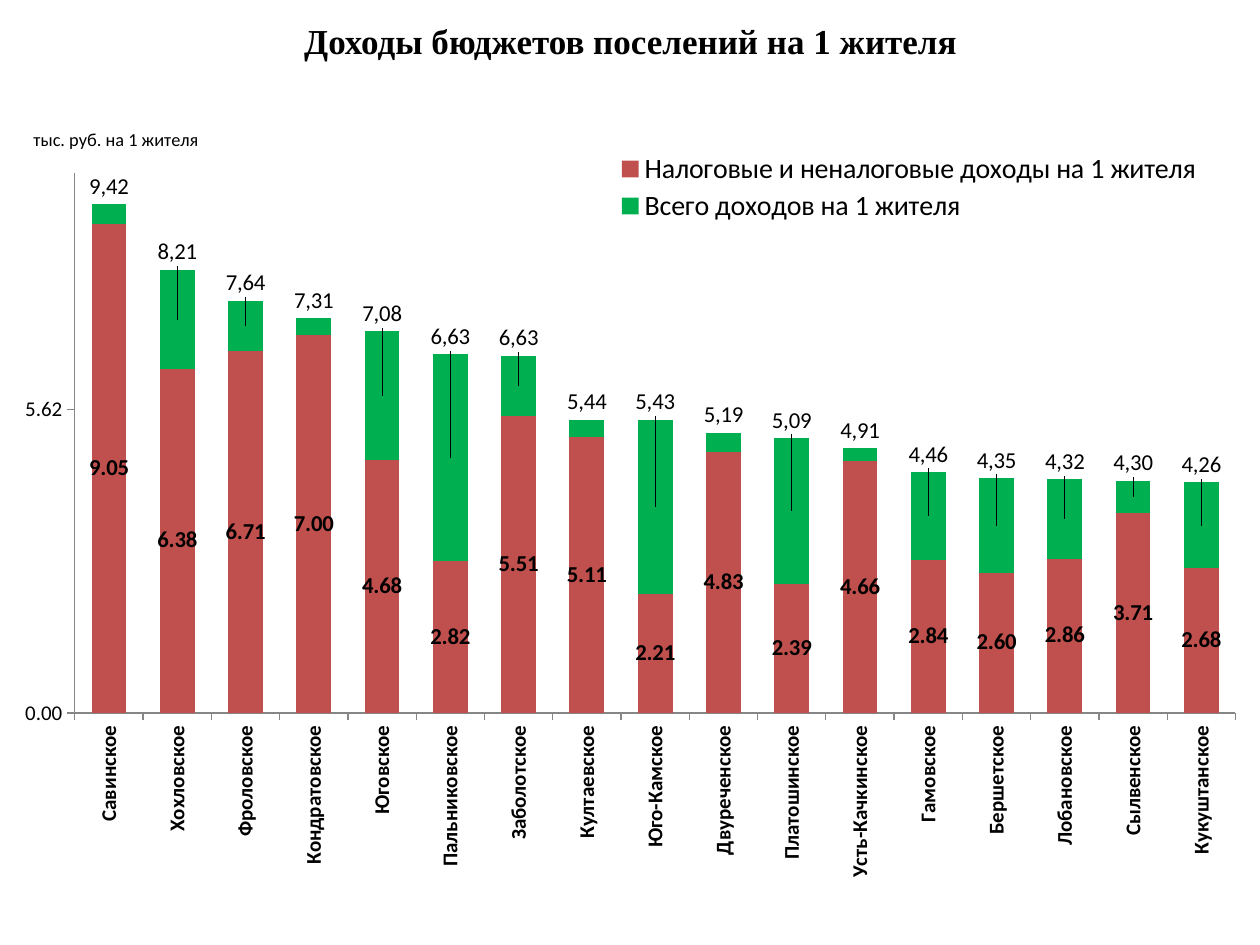
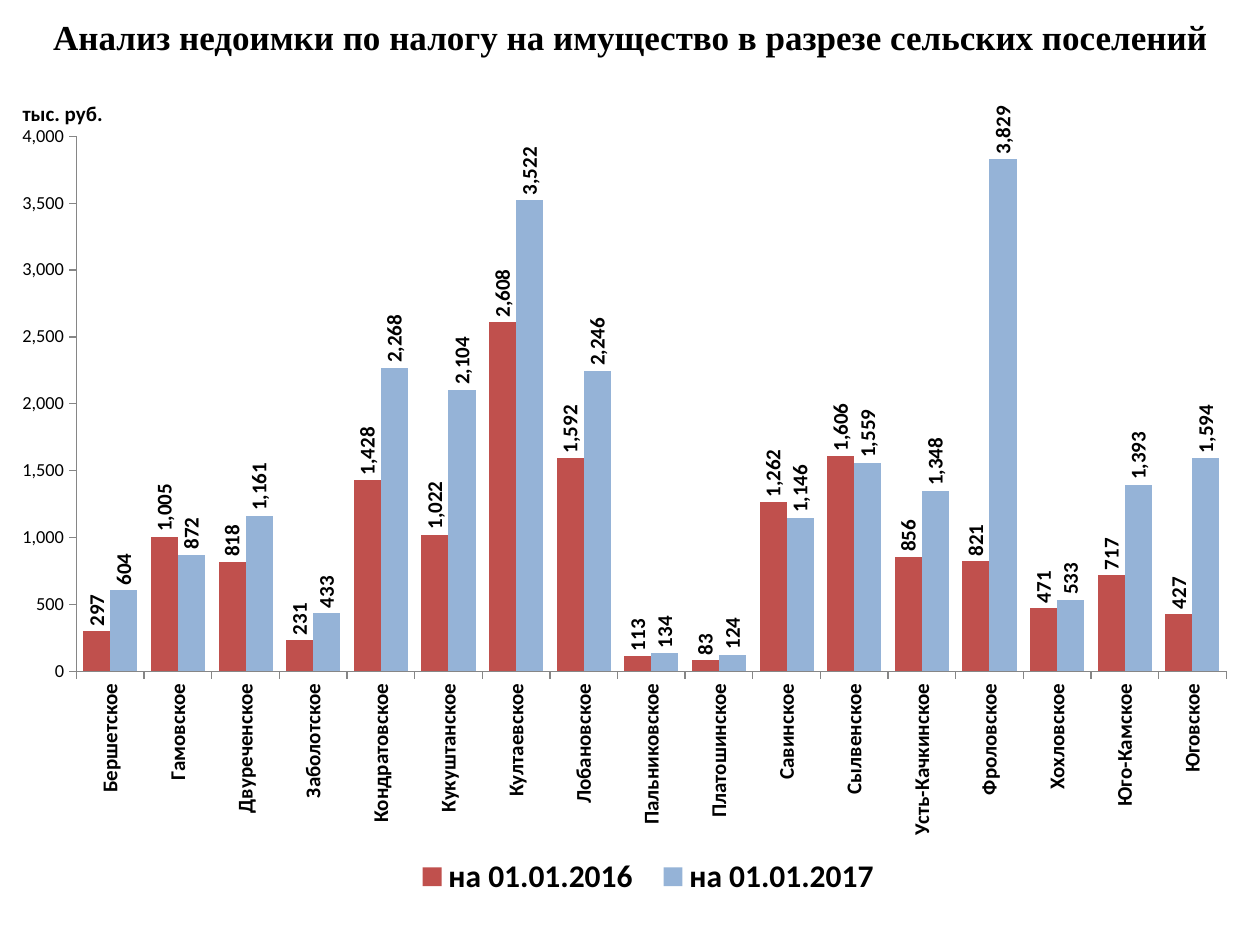
from dataclasses import dataclass
from typing import Any, Optional

import lxml.etree
import pptx
import pptx.chart.data
import pptx.dml.color
import pptx.enum.chart
import pptx.enum.text
import pptx.oxml.ns
import pptx.util

Pt = pptx.util.Pt
qn = pptx.oxml.ns.qn
ChartType = pptx.enum.chart.XL_CHART_TYPE
LegendPosition = pptx.enum.chart.XL_LEGEND_POSITION
LabelPosition = pptx.enum.chart.XL_LABEL_POSITION

COLOURS = {
    "text": "000000",
    "axis": "868686",
    "red": "C0504D",
    "green": "00B050",
    "blue": "95B3D7",
}
CHART_FONT = "Calibri"
TITLE_FONT = "Times New Roman"
UPWARDS = -90


@dataclass
class Series:
    name: str
    colour: str
    values: list[float]


@dataclass
class ChartSlide:
    title: str
    title_box: tuple[float, float, float, float]
    chart_box: tuple[float, float, float, float]
    chart_type: Any
    settlements: list[str]
    series: list[Series]
    plot_area: tuple[float, float, float, float]
    plot_format: dict[str, int]
    axis_format: dict[str, Any]
    axis_size: float
    number_format: str
    label_size: float
    label_angle: int
    label_position: Any
    unit: str
    unit_place: tuple[float, float]
    unit_font: dict[str, Any]
    legend_position: Any
    legend_place: tuple[float, float, float, float]
    legend_font: dict[str, Any]
    totals: Optional[list[str]] = None


INCOME = ChartSlide(
    title="Доходы бюджетов поселений на 1 жителя",
    title_box=(14.4, 9.4, 692, 28),
    chart_box=(14.4, 31.7, 692, 487.4),
    chart_type=ChartType.COLUMN_STACKED,
    settlements=[
        "Савинское", "Хохловское", "Фроловское", "Кондратовское", "Юговское",
        "Пальниковское", "Заболотское", "Култаевское", "Юго-Камское",
        "Двуреченское", "Платошинское", "Усть-Качкинское", "Гамовское",
        "Бершетское", "Лобановское", "Сылвенское", "Кукуштанское",
    ],
    series=[
        Series("Налоговые и неналоговые доходы на 1 жителя", "red",
               [9.05, 6.38, 6.71, 7, 4.68, 2.82, 5.51, 5.11, 2.21, 4.83,
                2.39, 4.66, 2.84, 2.6, 2.86, 3.71, 2.68]),
        Series("Всего доходов на 1 жителя", "green",
               [0.37, 1.83, 0.93, 0.31, 2.39, 3.82, 1.11, 0.32, 3.22, 0.36,
                2.7, 0.25, 1.62, 1.75, 1.47, 0.59, 1.59]),
    ],
    plot_area=(0.04, 0.138, 0.96, 0.633),
    plot_format={"gap_width": 96, "overlap": 100},
    axis_format={"minimum_scale": 0, "maximum_scale": 10, "major_unit": 5.62},
    axis_size=12,
    number_format="0.00",
    label_size=13,
    label_angle=0,
    label_position=LabelPosition.CENTER,
    unit="тыс. руб. на 1 жителя",
    unit_place=(0.003, 0.08),
    unit_font={"size": Pt(10.5), "bold": False},
    legend_position=LegendPosition.TOP,
    legend_place=(0.48, 0.11, 0.5, 0.09),
    legend_font={"size": Pt(16), "bold": False},
    totals=["9,42", "8,21", "7,64", "7,31", "7,08", "6,63", "6,63", "5,44",
            "5,43", "5,19", "5,09", "4,91", "4,46", "4,35", "4,32", "4,30",
            "4,26"],
)

ARREARS = ChartSlide(
    title="Анализ недоимки по налогу на имущество в разрезе сельских поселений",
    title_box=(14.4, 3.6, 692, 34),
    chart_box=(8.6, 37.4, 702.7, 494.6),
    chart_type=ChartType.COLUMN_CLUSTERED,
    settlements=sorted(INCOME.settlements),
    series=[
        Series("на 01.01.2016", "red",
               [297, 1005, 818, 231, 1428, 1022, 2608, 1592, 113, 83, 1262,
                1606, 856, 821, 471, 717, 427]),
        Series("на 01.01.2017", "blue",
               [604, 872, 1161, 433, 2268, 2104, 3522, 2246, 134, 124, 1146,
                1559, 1348, 3829, 533, 1393, 1594]),
    ],
    plot_area=(0.05, 0.082, 0.935, 0.618),
    plot_format={"gap_width": 50, "overlap": 0},
    axis_format={"minimum_scale": 0, "maximum_scale": 4000, "major_unit": 500},
    axis_size=10.5,
    number_format="#,##0",
    label_size=12,
    label_angle=UPWARDS,
    label_position=LabelPosition.OUTSIDE_END,
    unit="тыс. руб.",
    unit_place=(0.003, 0.035),
    unit_font={"size": Pt(12), "bold": True},
    legend_position=LegendPosition.BOTTOM,
    legend_place=(0.315, 0.91, 0.4, 0.055),
    legend_font={"size": Pt(18), "bold": True},
)


def rgb(name: str) -> pptx.dml.color.RGBColor:
    return pptx.dml.color.RGBColor.from_string(COLOURS[name])


def apply_format(target: Any, values: dict[str, Any]) -> None:
    for attribute, value in values.items():
        setattr(target, attribute, value)


def set_font(font: Any, **values: Any) -> None:
    apply_format(font, {"name": CHART_FONT, **values})
    font.color.rgb = rgb("text")


def rotate_text(element: Any, degrees: int) -> None:
    for body in element.iter(qn("a:bodyPr")):
        body.set("rot", str(degrees * 60000))
        body.set("vert", "horz")


def set_layout(element: Any, index: int, values: dict[str, float],
               mode: Optional[str] = "edge", inner: bool = False) -> None:
    """Place a chart part by fractions of the chart; mode None means an offset."""
    for old in element.findall(qn("c:layout")):
        element.remove(old)
    layout = lxml.etree.Element(qn("c:layout"))
    manual = lxml.etree.SubElement(layout, qn("c:manualLayout"))
    settings: dict[str, Any] = {"layoutTarget": "inner"} if inner else {}
    if mode:
        settings |= {"xMode": mode, "yMode": mode}
    for tag, value in (settings | values).items():
        lxml.etree.SubElement(manual, qn(f"c:{tag}")).set("val", str(value))
    element.insert(index, layout)


def add_title(slide: Any, content: ChartSlide) -> None:
    title = slide.shapes.title
    apply_format(title, dict(zip(("left", "top", "width", "height"),
                                 map(Pt, content.title_box))))
    frame = title.text_frame
    frame.text = content.title
    apply_format(frame, {
        "margin_top": 0, "margin_bottom": 0, "word_wrap": True,
        "vertical_anchor": pptx.enum.text.MSO_ANCHOR.MIDDLE})
    paragraph = frame.paragraphs[0]
    paragraph.alignment = pptx.enum.text.PP_ALIGN.CENTER
    set_font(paragraph.runs[0].font, name=TITLE_FONT, size=Pt(20), bold=True)


def format_axes(chart: Any, content: ChartSlide) -> None:
    settlements, amounts = chart.category_axis, chart.value_axis
    for axis in (settlements, amounts):
        apply_format(axis, {
            "has_major_gridlines": False,
            "major_tick_mark": pptx.enum.chart.XL_TICK_MARK.OUTSIDE})
        axis.format.line.color.rgb = rgb("axis")
        axis.format.line.width = Pt(0.75)
    set_font(settlements.tick_labels.font, size=Pt(12), bold=True)
    rotate_text(settlements._element, UPWARDS)

    apply_format(amounts, content.axis_format)
    set_font(amounts.tick_labels.font, size=Pt(content.axis_size), bold=False)
    apply_format(amounts.tick_labels, {
        "number_format": content.number_format, "number_format_is_linked": False})
    unit = amounts.axis_title
    unit.text_frame.text = content.unit
    set_font(unit.text_frame.paragraphs[0].runs[0].font, **content.unit_font)
    rotate_text(unit._element, 0)
    set_layout(unit._element, 1, dict(zip("xy", content.unit_place)))


def add_totals(series: Any, content: ChartSlide) -> None:
    """Write each total just above its stacked column."""
    scale = content.plot_area[3] / content.axis_format["maximum_scale"]
    for index, (total, value) in enumerate(zip(content.totals, series.values)):
        label = series.points[index].data_label
        label.text_frame.text = total
        set_font(label.text_frame.paragraphs[0].runs[0].font,
                 size=Pt(content.label_size), bold=False)
    for element, value in zip(series._element.iter(qn("c:dLbl")), series.values):
        rise = round(value * scale / 2 + 0.02, 4)
        set_layout(element, 1, {"x": 0, "y": -rise}, mode=None)


def format_series(plot: Any, content: ChartSlide) -> None:
    for series, source in zip(plot.series, content.series):
        series.format.fill.solid()
        series.format.fill.fore_color.rgb = rgb(source.colour)
        series.invert_if_negative = False
        labels = series.data_labels
        apply_format(labels, {
            "show_value": True, "number_format": content.number_format,
            "number_format_is_linked": False, "position": content.label_position})
        set_font(labels.font, size=Pt(content.label_size), bold=True)
        rotate_text(labels._element, content.label_angle)
    if content.totals:
        add_totals(plot.series[-1], content)


def add_chart(slide: Any, content: ChartSlide) -> None:
    data = pptx.chart.data.CategoryChartData(number_format=content.number_format)
    data.categories = content.settlements
    for series in content.series:
        data.add_series(series.name, series.values)
    chart = slide.shapes.add_chart(
        content.chart_type, *map(Pt, content.chart_box), data).chart
    apply_format(chart, {"has_title": False, "has_legend": True})
    set_font(chart.font, size=Pt(18))

    plot = chart.plots[0]
    apply_format(plot, {"vary_by_categories": False, **content.plot_format})
    area = chart._chartSpace.find(".//" + qn("c:plotArea"))
    set_layout(area, 0, dict(zip("xywh", content.plot_area)), inner=True)

    legend = chart.legend
    apply_format(legend, {
        "position": content.legend_position, "include_in_layout": False})
    set_font(legend.font, **content.legend_font)
    set_layout(legend._element, 1, dict(zip("xywh", content.legend_place)))
    format_axes(chart, content)
    format_series(plot, content)


def main() -> None:
    deck = pptx.Presentation()
    apply_format(deck, {"slide_width": Pt(720), "slide_height": Pt(540)})
    title_only = deck.slide_layouts[5]
    for content in (INCOME, ARREARS):
        slide = deck.slides.add_slide(title_only)
        add_title(slide, content)
        add_chart(slide, content)
    deck.save("out.pptx")


if __name__ == "__main__":
    main()
